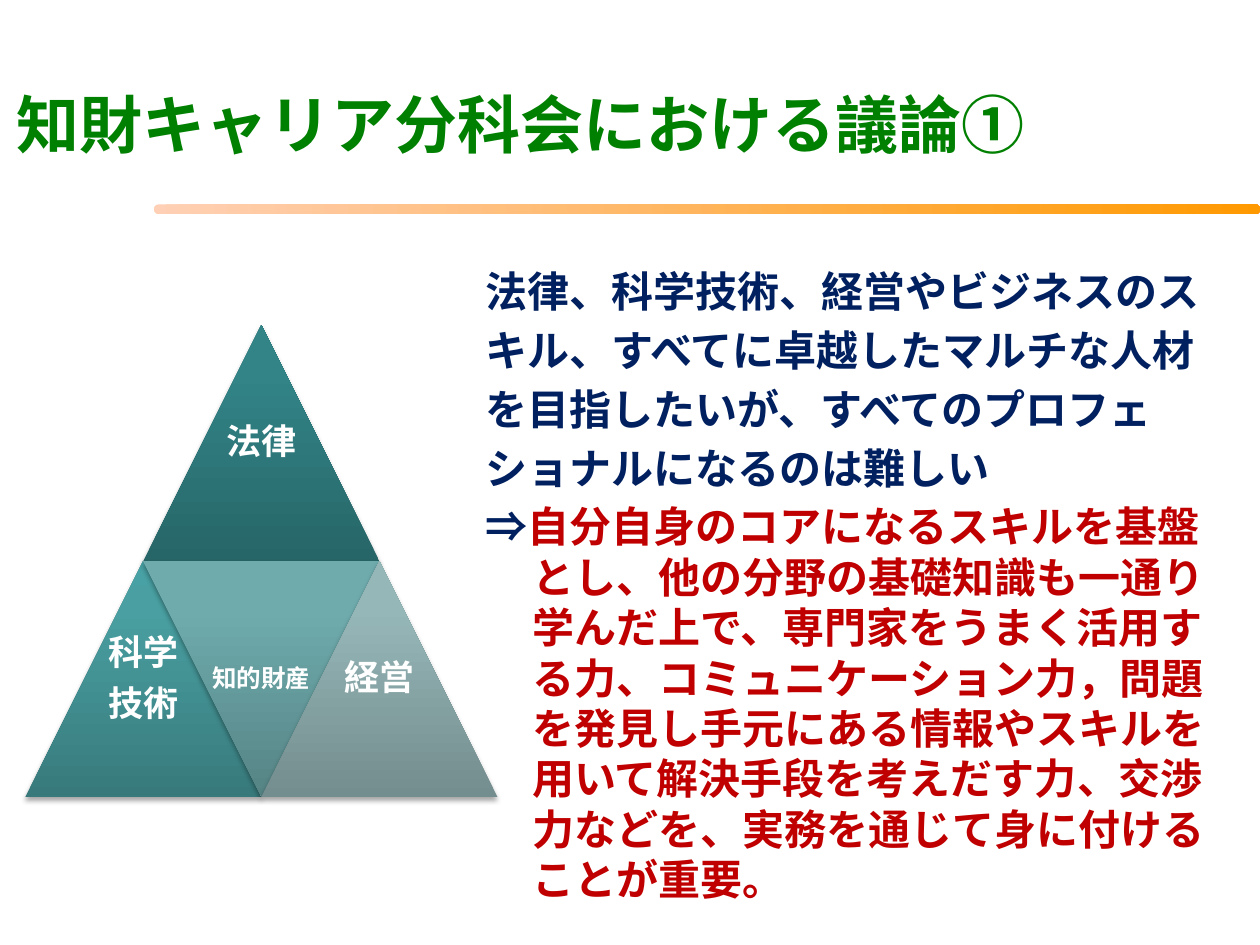
from dataclasses import dataclass

from pptx import Presentation
from pptx.dml.color import RGBColor
from pptx.enum.shapes import MSO_SHAPE
from pptx.enum.text import MSO_ANCHOR, PP_ALIGN
from pptx.oxml import parse_xml
from pptx.oxml.ns import nsdecls, qn
from pptx.util import Cm, Pt

TRI, ROUND = MSO_SHAPE.ISOSCELES_TRIANGLE, MSO_SHAPE.ROUNDED_RECTANGLE
MID, TOP = MSO_ANCHOR.MIDDLE, MSO_ANCHOR.TOP
MID_X, LEFT = PP_ALIGN.CENTER, PP_ALIGN.LEFT


@dataclass(frozen=True)
class Theme:
    font: str = "Noto Sans CJK JP"
    green: str = "008000"
    navy: str = "002060"
    red: str = "C00000"
    white: str = "FFFFFF"
    bar: tuple = ((0, "FFD0B5"), (100, "FF9900"))
    title: int = 36
    body: int = 24
    label: int = 20
    small: int = 14
    pitch: float = 1.2  # line height per type size


@dataclass(frozen=True)
class Box:
    """Place and size in centimetres."""
    x: float
    y: float
    w: float
    h: float

    def emu(self) -> tuple:
        return Cm(self.x), Cm(self.y), Cm(self.w), Cm(self.h)


@dataclass(frozen=True)
class Part:
    """One triangle: column in half sides, row in sides."""
    col: int
    row: int
    lines: tuple
    tones: tuple
    size: int = Theme.label
    turn: int = 0
    inset: float = 0.2


THEME = Theme()
SIDE, PYR_X, PYR_Y = 4.76, 0.51, 6.55
PARTS = (
    Part(1, 0, ("法律",), ("276668", "328487", "318789")),
    Part(0, 1, ("科学", "技術"), ("387A7C", "499FA1", "48A1A4")),
    Part(1, 1, ("知的財産",), ("568485", "6FABAD", "6FADAF"),
         Theme.small, 180, 0.15),
    Part(2, 1, ("経営",), ("748D8E", "96B7B8", "96B8BA")),
)
LINES = (
    "法律、科学技術、経営やビジネスのス",
    "キル、すべてに卓越したマルチな人材",
    "を目指したいが、すべてのプロフェ",
    "ショナルになるのは難しい",
)
POINT = (
    "自分自身のコアになるスキルを基盤とし、他の分野の基礎知識も一通り"
    "学んだ上で、専門家をうまく活用する力、コミュニケーション力，問題を"
    "発見し手元にある情報やスキルを用いて解決手段を考えだす力、交渉力"
    "などを、実務を通じて身に付けることが重要。"
)


def add_run(para, text: str, size: int, tone: str) -> None:
    run = para.add_run()
    run.text = text
    font = run.font
    font.size, font.bold, font.name = Pt(size), True, THEME.font
    font.color.rgb = RGBColor.from_string(tone)
    east = parse_xml(f'<a:ea {nsdecls("a")} typeface="{THEME.font}"/>')
    run._r.rPr.find(qn("a:latin")).addnext(east)


def add_text(shapes, box: Box, anchor, inset: float = 0.25):
    frame = shapes.add_textbox(*box.emu()).text_frame
    frame.word_wrap, frame.vertical_anchor = True, anchor
    frame.margin_left = frame.margin_right = Cm(inset)
    frame.margin_top = frame.margin_bottom = Cm(min(inset, 0.2))
    return frame


def add_para(frame, first: bool, align, pitch: float):
    para = frame.paragraphs[0] if first else frame.add_paragraph()
    para.alignment, para.line_spacing = align, Pt(pitch)
    return para


def add_shape(shapes, kind, box: Box, stops: tuple, angle: int):
    """Draw a lineless shape with a gradient that stays upright when turned."""
    shape = shapes.add_shape(kind, *box.emu())
    marks = "".join(
        f'<a:gs pos="{at * 1000}"><a:srgbClr val="{tone}"/></a:gs>'
        for at, tone in stops)
    shape._element.spPr.find(qn("a:prstGeom")).addnext(parse_xml(
        f'<a:gradFill {nsdecls("a")} rotWithShape="0"><a:gsLst>{marks}'
        f'</a:gsLst><a:lin ang="{angle * 60000}" scaled="0"/></a:gradFill>'))
    shape.line.fill.background()
    shape.shadow.inherit = False
    return shape


def add_shade(shape) -> None:
    shape._element.spPr.find(qn("a:effectLst")).append(parse_xml(
        f'<a:outerShdw {nsdecls("a")} blurRad="{Pt(3.1)}" dist="{Pt(1.8)}" '
        'dir="5400000" rotWithShape="0"><a:srgbClr val="000000">'
        '<a:alpha val="35000"/></a:srgbClr></a:outerShdw>'))


def add_part(shapes, part: Part) -> None:
    box = Box(PYR_X + part.col * SIDE / 2, PYR_Y + part.row * SIDE, SIDE, SIDE)
    shape = add_shape(shapes, TRI, box, tuple(zip((0, 80, 100), part.tones)), 270)
    shape.rotation = part.turn
    add_shade(shape)
    frame = add_text(shapes, box, MID, part.inset)
    for i, line in enumerate(part.lines):
        para = add_para(frame, i == 0, MID_X, part.size * THEME.pitch * 0.9)
        para.space_after = Pt(part.size * 0.35)
        add_run(para, line, part.size, THEME.white)


def add_body(shapes) -> None:
    frame = add_text(shapes, Box(9.53, 5.16, 15.29, 13.49), TOP)
    for i, line in enumerate(LINES + ("⇒",)):
        para = add_para(frame, i == 0, LEFT, THEME.body * THEME.pitch)
        if i:
            para.space_before = Pt(THEME.body * 0.2)
        props = para._p.get_or_add_pPr()
        props.set("marL", str(Cm(0.95)))
        props.set("indent", str(-Cm(0.95)))
        add_run(para, line, THEME.body, THEME.navy)
    add_run(para, POINT, THEME.body, THEME.red)


def main() -> None:
    deck = Presentation()
    deck.slide_width, deck.slide_height = Cm(25.4), Cm(19.05)
    shapes = deck.slides.add_slide(deck.slide_layouts[6]).shapes

    bar = add_shape(shapes, ROUND, Box(3.1, 4.12, 22.3, 0.2), THEME.bar, 0)
    bar.adjustments[0] = 0.5
    title = add_text(shapes, Box(-0.41, 0.58, 21.82, 3.81), MID)
    para = add_para(title, True, MID_X, THEME.title * THEME.pitch)
    add_run(para, "知財キャリア分科会における議論①", THEME.title, THEME.green)
    add_body(shapes)
    group = shapes.add_group_shape()
    for part in PARTS:
        add_part(group.shapes, part)
    deck.save("out.pptx")


if __name__ == "__main__":
    main()
